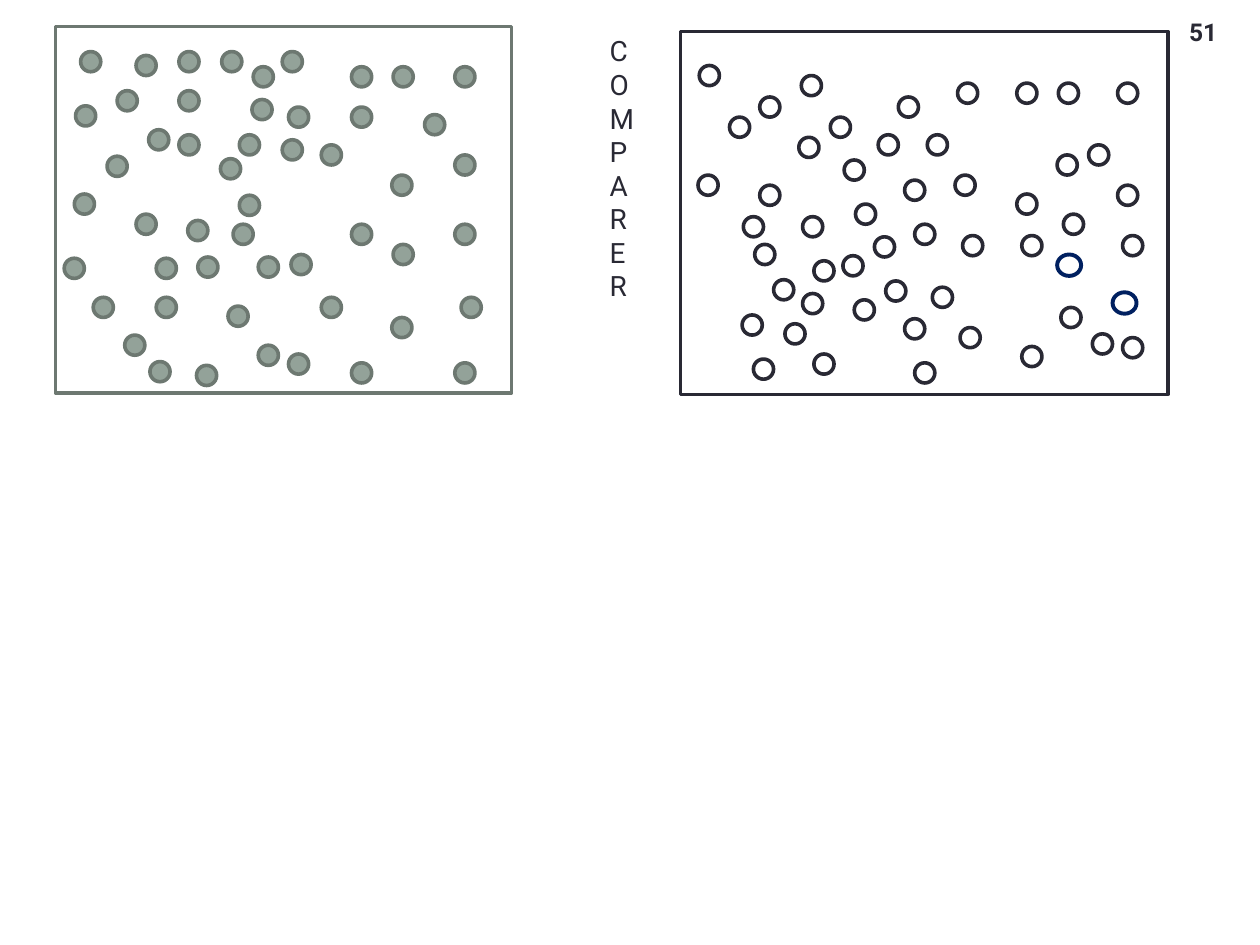
from dataclasses import dataclass
from typing import Optional

from pptx import Presentation
from pptx.dml.color import RGBColor
from pptx.enum.shapes import MSO_SHAPE as Preset
from pptx.enum.text import MSO_ANCHOR as Anchor, MSO_AUTO_SIZE as AutoSize, PP_ALIGN as Align
from pptx.util import Emu, Pt

EMU_PER_PX = 9144  # 100 px to the inch
INK, GREY, SAGE, NAVY, WHITE = "292934", "6D7871", "93A299", "002060", "FFFFFF"


@dataclass(frozen=True)
class Style:
    line: str
    fill: Optional[str] = None
    line_width: float = 2.08


@dataclass(frozen=True)
class Dots:
    """Equal ellipses, each given by its left and top."""
    style: Style
    places: tuple[tuple[int, int], ...]
    width: int = 16
    height: int = 16


SAGE_DOT = Style(GREY, SAGE)
WHITE_DOT = Style(INK, WHITE)
NAVY_RING = Style(NAVY, line_width=2.25)

LOOSE_SAGE = Dots(SAGE_DOT, (
    (60, 84), (108, 44), (108, 170), (59, 154), (142, 107), (190, 107),
    (190, 155), (185, 178), (149, 175), (85, 124), (119, 287)))

SAGE_GROUPS = (
    Dots(SAGE_DOT, (
        (201, 53), (279, 53), (279, 85), (255, 115), (229, 85),
        (312, 53), (361, 53), (361, 123), (337, 91), (311, 139))),
    Dots(SAGE_DOT, (
        (231, 202), (279, 178), (279, 288), (255, 236), (229, 281),
        (312, 194), (361, 178), (361, 288), (366, 236), (311, 252))),
    Dots(SAGE_DOT, (
        (64, 41), (142, 41), (142, 72), (118, 103), (93, 72),
        (176, 41), (224, 41), (224, 111), (200, 79), (175, 126))),
    Dots(SAGE_DOT, (
        (51, 205), (124, 205), (124, 236), (99, 266), (74, 236),
        (157, 204), (205, 204), (205, 274), (181, 243), (156, 290))),
)

WHITE_DOTS = Dots(WHITE_DOT, (
    (599, 194), (646, 207), (646, 281), (623, 257), (598, 285),
    (679, 162), (726, 178), (726, 288), (703, 223), (678, 238),
    (760, 66), (807, 66), (807, 154), (736, 107), (758, 139),
    (840, 66), (887, 66), (887, 147), (864, 115), (839, 123),
    (555, 52), (603, 77), (603, 147), (579, 93), (554, 139),
    (636, 60), (713, 77), (697, 107), (659, 93), (634, 109),
    (764, 187), (811, 187), (811, 275), (740, 228), (762, 260),
    (844, 170), (891, 187), (891, 268), (867, 265), (842, 244),
    (590, 172), (637, 172), (637, 233), (614, 222), (589, 250),
    (670, 127), (718, 143), (718, 253), (694, 188), (669, 203)))
NAVY_RINGS = Dots(NAVY_RING, ((883, 232), (839, 202)), 19, 17)


def px(length: int) -> Emu:
    return Emu(length * EMU_PER_PX)


def color(hex_string: str) -> RGBColor:
    return RGBColor.from_string(hex_string)


def add_preset(shapes, preset: Preset, box: tuple[int, int, int, int], style: Style) -> None:
    shape = shapes.add_shape(preset, *map(px, box))
    shape.shadow.inherit = False
    if style.fill:
        shape.fill.solid()
        shape.fill.fore_color.rgb = color(style.fill)
    else:
        shape.fill.background()
    shape.line.color.rgb = color(style.line)
    shape.line.width = Pt(style.line_width)


def add_dots(shapes, dots: Dots) -> None:
    for left, top in dots.places:
        add_preset(shapes, Preset.OVAL, (left, top, dots.width, dots.height), dots.style)


def add_text(shapes, text: str, box: tuple[int, int, int, int], *, size: int,
             bold: bool = False, align: Align = Align.LEFT,
             anchor: Anchor = Anchor.TOP, grow: bool = False) -> None:
    """Each line of the text becomes a paragraph."""
    frame = shapes.add_textbox(*map(px, box)).text_frame
    frame.word_wrap = True
    frame.vertical_anchor = anchor
    frame.auto_size = AutoSize.SHAPE_TO_FIT_TEXT if grow else AutoSize.NONE
    frame.text = text
    for paragraph in frame.paragraphs:
        paragraph.alignment = align
        for run in paragraph.runs:
            run.font.name = "Roboto"
            run.font.size = Pt(size)
            run.font.bold = bold
            run.font.color.rgb = color(INK)


def main() -> None:
    presentation = Presentation()
    presentation.slide_width, presentation.slide_height = px(1000), px(750)
    slide = presentation.slides.add_slide(presentation.slide_layouts[6])
    shapes = slide.shapes

    add_preset(shapes, Preset.RECTANGLE, (44, 21, 362, 291), Style(GREY))
    add_dots(shapes, LOOSE_SAGE)
    for dots in SAGE_GROUPS:
        add_dots(shapes.add_group_shape().shapes, dots)

    # The narrow box breaks the last paragraph after every letter.
    add_text(shapes, "C\nO\nM\nP\nARER", (474, 22, 42, 226), size=16, grow=True)
    add_text(shapes, "51", (859, 7, 117, 36), size=14, bold=True,
             align=Align.RIGHT, anchor=Anchor.MIDDLE)

    white_panel = shapes.add_group_shape().shapes
    add_preset(white_panel, Preset.RECTANGLE, (540, 25, 387, 288), Style(INK))
    add_dots(white_panel, NAVY_RINGS)
    add_dots(white_panel, WHITE_DOTS)

    presentation.save("out.pptx")


if __name__ == "__main__":
    main()
